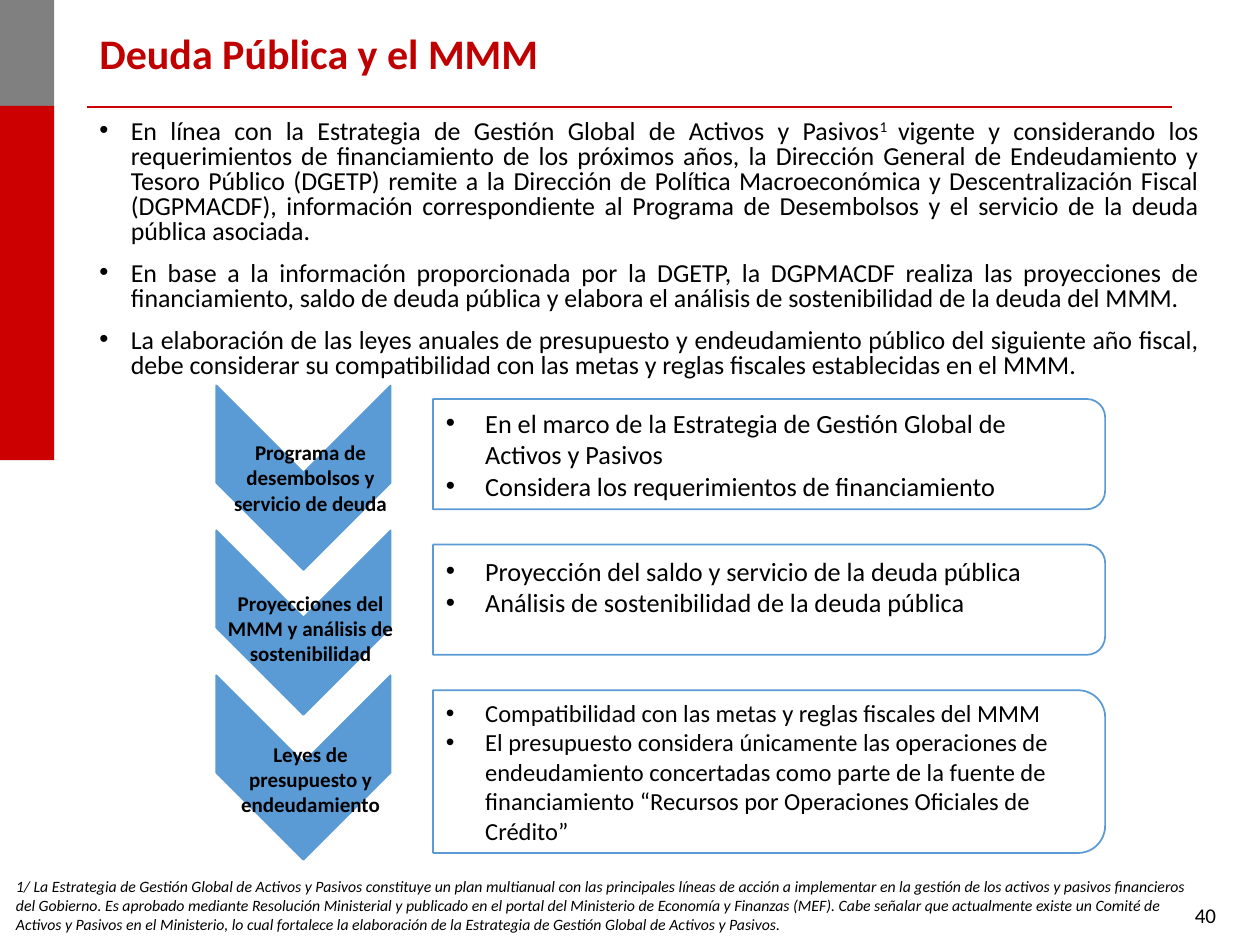
from lxml import etree
from pptx import Presentation
from pptx.dml.color import RGBColor
from pptx.enum.shapes import MSO_CONNECTOR, MSO_SHAPE
from pptx.enum.text import MSO_ANCHOR, PP_ALIGN
from pptx.oxml.ns import qn
from pptx.util import Pt

LEFT, RIGHT, MID, JUST = PP_ALIGN.LEFT, PP_ALIGN.RIGHT, PP_ALIGN.CENTER, PP_ALIGN.JUSTIFY
RECT, ARROW, CARD = MSO_SHAPE.RECTANGLE, MSO_SHAPE.CHEVRON, MSO_SHAPE.ROUND_2_SAME_RECTANGLE
TOP, CENTER = MSO_ANCHOR.TOP, MSO_ANCHOR.MIDDLE


class Theme:
    font = "Calibri"
    black = RGBColor(0, 0, 0)
    white = RGBColor(255, 255, 255)
    gray = RGBColor(0x80, 0x80, 0x80)
    red = RGBColor(0xCC, 0, 0)
    title = RGBColor(0xC0, 0, 0)
    blue = RGBColor(0x5B, 0x9B, 0xD5)
    head, body, label, note = 24, 14.8, 12, 9


def add_text(box, paras, size, color=Theme.black, align=LEFT, bold=False, ital=False,
             anchor=TOP, space=None, gap=None, dent=0):
    area = slide.shapes.add_textbox(*map(Pt, box))
    frame = area.text_frame
    frame.word_wrap = True
    frame.vertical_anchor = anchor
    for i, runs in enumerate(paras):
        para = frame.paragraphs[0] if i == 0 else frame.add_paragraph()
        para.alignment = align
        if space:
            para.line_spacing = space
        if gap:
            para.space_before = Pt(gap)
        if dent:
            props = para._p.get_or_add_pPr()
            props.set("marL", str(Pt(dent)))
            props.set("indent", str(-Pt(dent)))
            etree.SubElement(props, qn("a:buFont")).set("typeface", "Arial")
            etree.SubElement(props, qn("a:buChar")).set("char", "•")
        for j, words in enumerate(runs):
            run = para.add_run()
            run.text = words
            font = run.font
            font.name, font.size, font.bold, font.italic = Theme.font, Pt(size), bold, ital
            font.color.rgb = color
            if j == 1:
                run._r.get_or_add_rPr().set("baseline", "30000")


def add_block(kind, box, fill, line=None, turn=0):
    block = slide.shapes.add_shape(kind, *map(Pt, box))
    block.shadow.inherit = False
    block.rotation = turn
    block.fill.solid()
    block.fill.fore_color.rgb = fill
    if line is None:
        block.line.fill.background()
    else:
        block.line.color.rgb = line
        block.line.width = Pt(1)
    return block


deck = Presentation()
deck.slide_width, deck.slide_height = Pt(720), Pt(540)
slide = deck.slides.add_slide(deck.slide_layouts[6])

rule = slide.shapes.add_connector(MSO_CONNECTOR.STRAIGHT, Pt(50), Pt(61), Pt(670), Pt(61))
rule.line.color.rgb = Theme.red
rule.line.width = Pt(1)
etree.SubElement(rule._element.spPr, qn("a:effectLst"))
add_block(RECT, (0, 0, 31, 60.5), Theme.gray)
add_block(RECT, (0, 60.5, 31, 202.5), Theme.red)

add_text((534, 512, 168, 28), [["40"]], Theme.label, align=RIGHT)
add_text((49.7, 5, 620.6, 54), [["Deuda Pública y el MMM"]], Theme.head, Theme.title,
         bold=True, anchor=CENTER, space=0.9)

points = [
    ["En línea con la Estrategia de Gestión Global de Activos y Pasivos", "1 ",
     "vigente y considerando los requerimientos de financiamiento de los próximos años, "
     "la Dirección General de Endeudamiento y Tesoro Público (DGETP) remite a la Dirección "
     "de Política Macroeconómica y Descentralización Fiscal (DGPMACDF), información "
     "correspondiente al Programa de Desembolsos y el servicio de la deuda pública asociada."],
    ["En base a la información proporcionada por la DGETP, la DGPMACDF realiza las "
     "proyecciones de financiamiento, saldo de deuda pública y elabora el análisis de "
     "sostenibilidad de la deuda del MMM."],
    ["La elaboración de las leyes anuales de presupuesto y endeudamiento público del "
     "siguiente año fiscal, debe considerar su compatibilidad con las metas y reglas "
     "fiscales establecidas en el MMM."],
]
add_text((49.7, 65.5, 642.2, 170), points, Theme.body, align=JUST, space=0.8, gap=10, dent=18)

note = ("1/ La Estrategia de Gestión Global de Activos y Pasivos constituye un plan multianual "
        "con las principales líneas de acción a implementar en la gestión de los activos y "
        "pasivos financieros del Gobierno. Es aprobado mediante Resolución Ministerial y "
        "publicado en el portal del Ministerio de Economía y Finanzas (MEF). Cabe señalar que "
        "actualmente existe un Comité de Activos y Pasivos en el Ministerio, lo cual fortalece "
        "la elaboración de la Estrategia de Gestión Global de Activos y Pasivos.")
add_text((2, 497.5, 685.5, 40), [[note]], Theme.note, ital=True)

steps = [
    ("Programa de desembolsos y servicio de deuda", 63, 229, 15,
     ["En el marco de la Estrategia de Gestión Global de Activos y Pasivos",
      "Considera los requerimientos de financiamiento"]),
    ("Proyecciones del MMM y análisis de sostenibilidad", 63, 313.5, 15,
     ["Proyección del saldo y servicio de la deuda pública",
      "Análisis de sostenibilidad de la deuda pública"]),
    ("Leyes de presupuesto y endeudamiento", 93, 395.3, 14,
     ["Compatibilidad con las metas y reglas fiscales del MMM",
      "El presupuesto considera únicamente las operaciones de endeudamiento concertadas como "
      "parte de la fuente de financiamiento “Recursos por Operaciones Oficiales de Crédito”"]),
]
wide, mid = 384, 439.5
for i, (name, high, top, size, items) in enumerate(steps):
    add_block(ARROW, (120.7, 223.2 + 82.8 * i, 105.4, 99.6), Theme.blue, Theme.blue, 90)
    center = 228 + 83.2 * i + high / 2
    card = add_block(CARD, (mid - high / 2, center - wide / 2, high, wide),
                     Theme.white, Theme.blue, 90)
    tint = card._element.spPr.find(qn("a:solidFill"))[0]
    etree.SubElement(tint, qn("a:alpha")).set("val", "90000")
    add_text((123.1, 247.7 + 86.2 * i, 108.7, 51), [[name]], Theme.label, align=MID, bold=True)
    add_text((247.7, top, 380, high), [[item] for item in items], size, dent=22.5)

deck.save("out.pptx")
